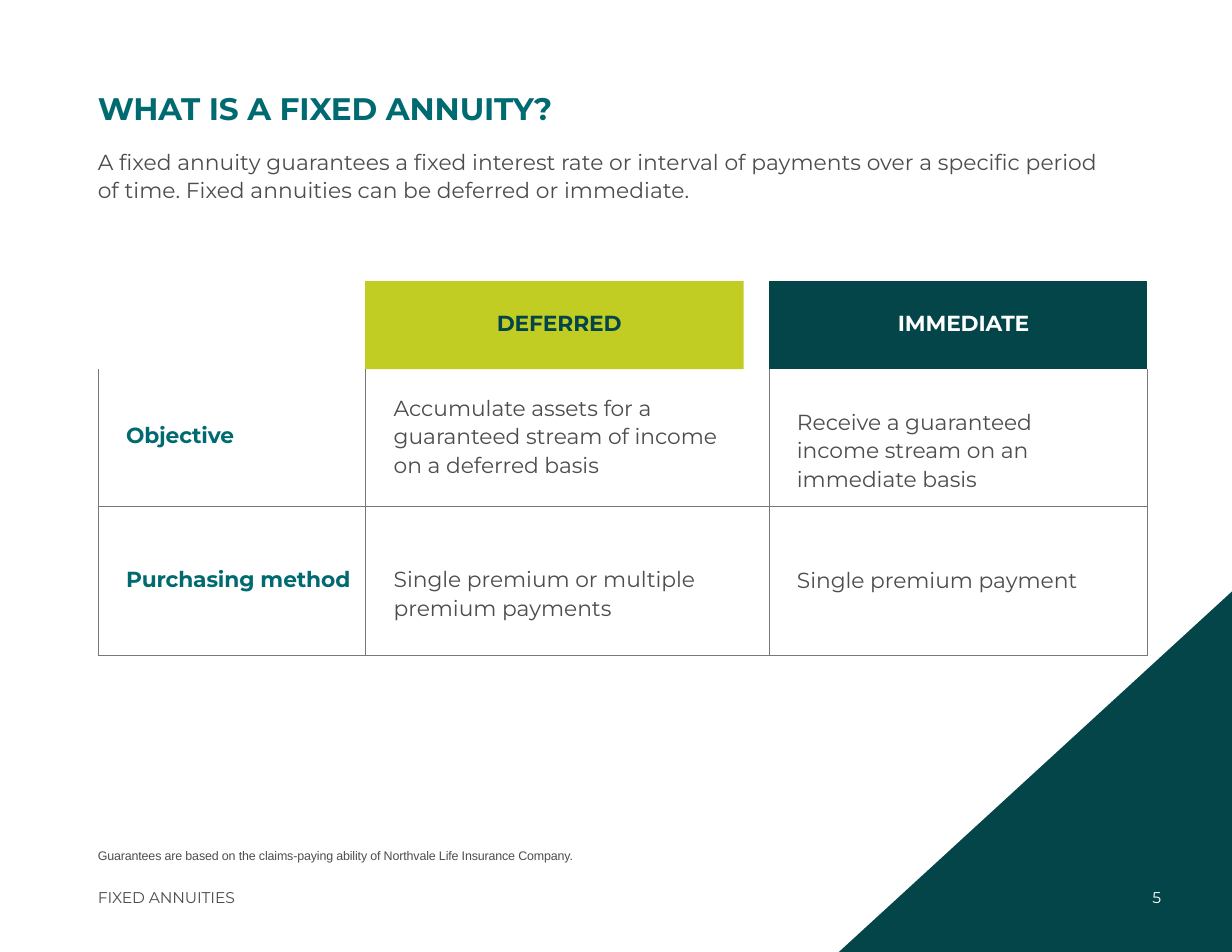
"""Build the fixed annuity slide with a comparison table."""
from lxml import etree
from pptx import Presentation
from pptx.dml.color import RGBColor
from pptx.enum import shapes, text
from pptx.oxml import ns
from pptx.util import Pt

DARK = RGBColor(0x03, 0x45, 0x49)
TEAL = RGBColor(0x00, 0x6A, 0x71)
LIME = RGBColor(0xC2, 0xCD, 0x23)
GREY = RGBColor(0x4D, 0x4D, 0x4F)
RULE = RGBColor(0x77, 0x78, 0x7B)
WHITE = RGBColor(0xFF, 0xFF, 0xFF)

WIDTH, HEIGHT = 792, 612
MARGIN = 62.9
FONT = "Montserrat"
LINE_SPACING = 1.07

TEXTS = [
    ("WHAT IS A FIXED ANNUITY?", (MARGIN, 57.8, 320, 25), FONT, 20, TEAL, True, -0.1),
    ("A fixed annuity guarantees a fixed interest rate or interval of payments over a "
     "specific period of time. Fixed annuities can be deferred or immediate.",
     (MARGIN, 94.4, 648, 38), FONT, 14, GREY, False, 0),
    ("Guarantees are based on the claims-paying ability of Northvale Life Insurance Company.",
     (MARGIN, 545.2, 340, 11), "Arial", 8, GREY, False, -0.12),
    ("FIXED ANNUITIES", (MARGIN, 570.6, 110, 13), FONT, 10, GREY, False, -0.07),
    ("5", (740.8, 570.6, 12, 13), FONT, 10, WHITE, False, -0.5),
]

ROWS = [
    ["DEFERRED", None, "IMMEDIATE"],
    ["Objective",
     "Accumulate assets for a guaranteed stream of income on a deferred basis",
     "Receive a guaranteed income stream on an immediate basis"],
    ["Purchasing method",
     "Single premium or multiple premium payments",
     "Single premium payment"],
]
TABLE_LEFT, TABLE_TOP = 63, 180.7
COLUMN_WIDTHS = [172.1, 243, 243]
ROW_HEIGHTS = [56.6, 88.4, 95.8]
HEADERS = {0: (DARK, 256.4), 2: (WHITE, 82.9)}
LOWERED_CELLS = {(1, 2), (2, 1)}
INDENT = 18
BODY_RIGHT = 32
LIFT = 2.4


def style(paragraph, font, size, color, bold, tracking):
    for run in paragraph.runs:
        run.font.name = font
        run.font.size = Pt(size)
        run.font.bold = bold
        run.font.color.rgb = color
        run._r.get_or_add_rPr().set("spc", str(round(tracking * 100)))


def add_text(slide, content, box, font, size, color, bold, tracking):
    frame = slide.shapes.add_textbox(*map(Pt, box)).text_frame
    frame.word_wrap = True
    frame.margin_left = frame.margin_right = frame.margin_top = frame.margin_bottom = 0
    frame.text = content
    paragraph = frame.paragraphs[0]
    if size == 14:
        paragraph.line_spacing = LINE_SPACING
    style(paragraph, font, size, color, bold, tracking)


def fill_shape(shape, color):
    shape.shadow.inherit = False
    shape.fill.solid()
    shape.fill.fore_color.rgb = color
    shape.line.fill.background()


def add_corner(slide):
    builder = slide.shapes.build_freeform(Pt(WIDTH), Pt(380.2))
    builder.add_line_segments([(Pt(539.3), Pt(HEIGHT)), (Pt(WIDTH), Pt(HEIGHT))], close=True)
    fill_shape(builder.convert_to_shape(), DARK)


def add_deferred_band(slide):
    left, bottom = TABLE_LEFT + COLUMN_WIDTHS[0], TABLE_TOP + ROW_HEIGHTS[0]
    band = slide.shapes.add_shape(
        shapes.MSO_SHAPE.RECTANGLE, Pt(left), Pt(TABLE_TOP),
        Pt(COLUMN_WIDTHS[1]), Pt(ROW_HEIGHTS[0]))
    fill_shape(band, LIME)
    edge = slide.shapes.add_connector(
        shapes.MSO_CONNECTOR.STRAIGHT, Pt(left), Pt(bottom), Pt(left), Pt(TABLE_TOP))
    edge.line.color.rgb = LIME
    edge.line.width = Pt(0.5)
    etree.SubElement(edge._element.spPr, ns.qn("a:effectLst"))


def set_borders(cell, visible):
    properties = cell._tc.get_or_add_tcPr()
    for side in "LRTB":
        line = etree.SubElement(properties, ns.qn(f"a:ln{side}"), w=str(Pt(0.5)))
        if side in visible:
            fill = etree.SubElement(line, ns.qn("a:solidFill"))
            etree.SubElement(fill, ns.qn("a:srgbClr"), val=str(RULE))
        else:
            etree.SubElement(line, ns.qn("a:noFill"))


def fill_cell(cell, row, column):
    set_borders(cell, ["", "LRB", "LRTB"][row])
    cell.fill.background()
    content = ROWS[row][column]
    if content is None:
        return
    cell.vertical_anchor = text.MSO_ANCHOR.MIDDLE
    cell.margin_left = Pt(INDENT)
    cell.margin_right = Pt(BODY_RIGHT if row and column else 0)
    cell.margin_top = Pt(INDENT if (row, column) in LOWERED_CELLS else 0)
    cell.margin_bottom = Pt(LIFT)
    cell.text_frame.text = content
    paragraph = cell.text_frame.paragraphs[0]
    color = GREY if column else TEAL
    if row == 0:
        color, indent = HEADERS[column]
        cell.margin_left = Pt(indent)
        if column:
            cell.fill.solid()
            cell.fill.fore_color.rgb = DARK
    elif column:
        paragraph.line_spacing = LINE_SPACING
    bold = row == 0 or column == 0
    style(paragraph, FONT, 14, color, bold, -0.1 if bold else -0.05)


def add_comparison(slide):
    table = slide.shapes.add_table(
        len(ROWS), len(COLUMN_WIDTHS), Pt(TABLE_LEFT), Pt(TABLE_TOP),
        Pt(sum(COLUMN_WIDTHS)), Pt(sum(ROW_HEIGHTS))).table
    table.first_row = table.horz_banding = False
    for column, width in zip(table.columns, COLUMN_WIDTHS):
        column.width = Pt(width)
    for row, height in zip(table.rows, ROW_HEIGHTS):
        row.height = Pt(height)
    table.cell(0, 0).merge(table.cell(0, 1))
    for row, values in enumerate(ROWS):
        for column in range(len(values)):
            fill_cell(table.cell(row, column), row, column)


def main():
    presentation = Presentation()
    presentation.slide_width, presentation.slide_height = Pt(WIDTH), Pt(HEIGHT)
    slide = presentation.slides.add_slide(presentation.slide_layouts[6])
    add_corner(slide)
    add_deferred_band(slide)
    add_comparison(slide)
    for item in TEXTS:
        add_text(slide, *item)
    presentation.save("out.pptx")


if __name__ == "__main__":
    main()
